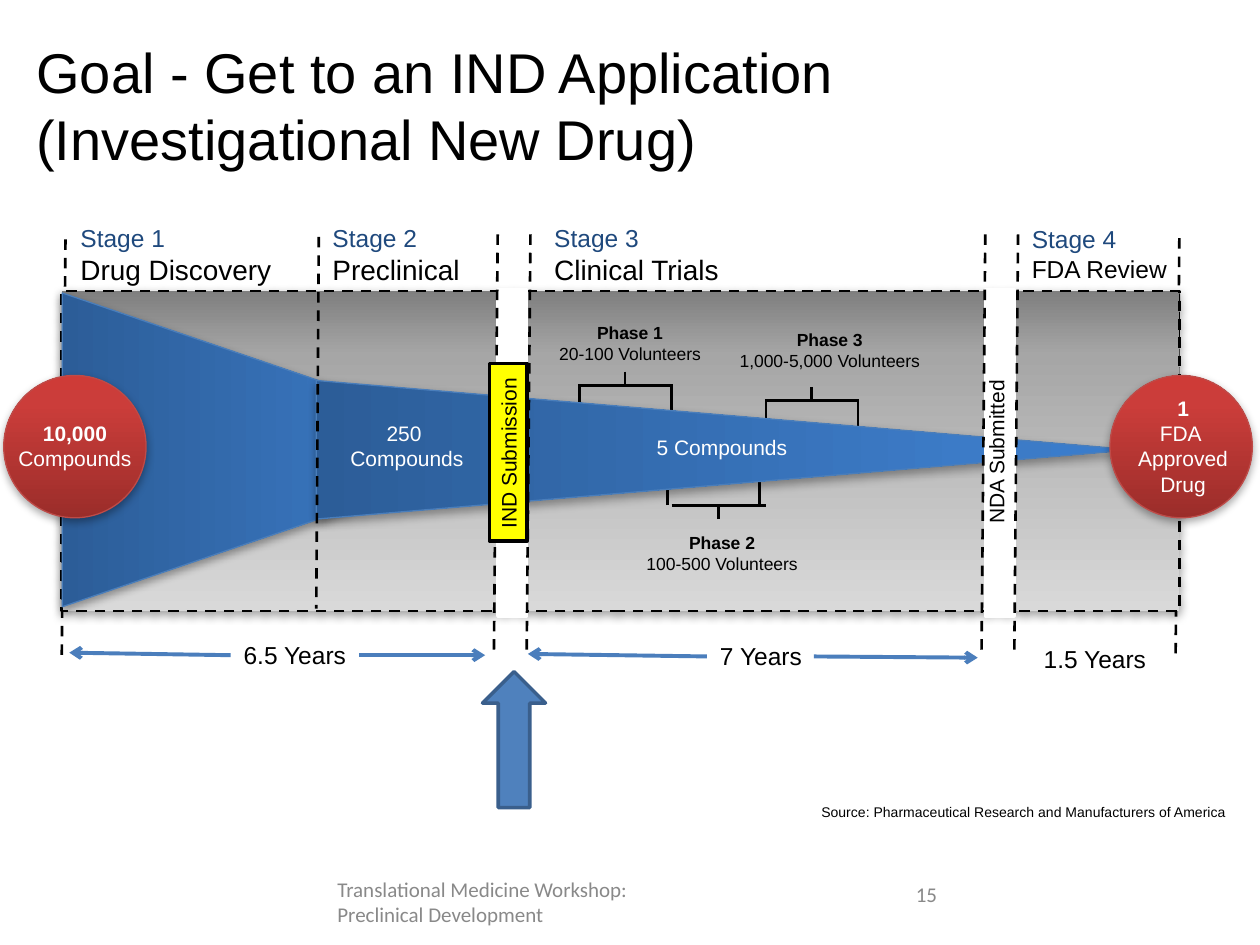
from lxml import etree
from pptx import Presentation
from pptx.dml.color import RGBColor
from pptx.enum.dml import MSO_LINE
from pptx.enum.shapes import MSO_CONNECTOR, MSO_SHAPE
from pptx.enum.text import MSO_ANCHOR, MSO_AUTO_SIZE, PP_ALIGN
from pptx.oxml.ns import qn
from pptx.util import Inches, Pt

RECTANGLE, ELLIPSE = MSO_SHAPE.RECTANGLE, MSO_SHAPE.OVAL
TRIANGLE, UP_POINTER = MSO_SHAPE.FLOWCHART_EXTRACT, MSO_SHAPE.DOWN_ARROW
STRAIGHT, DASH = MSO_CONNECTOR.STRAIGHT, MSO_LINE.DASH
LEFT, CENTER = PP_ALIGN.LEFT, PP_ALIGN.CENTER
TOP, MIDDLE = MSO_ANCHOR.TOP, MSO_ANCHOR.MIDDLE
GROW = MSO_AUTO_SIZE.SHAPE_TO_FIT_TEXT

COLORS = {
    "black": "000000", "white": "FFFFFF", "yellow": "FFFF00",
    "stage": "1F497D", "footer": "898989", "span": "4B7EBC",
    "funnel_edge": "4A7EBB", "badge_edge": "BE4B48",
    "pointer": "4F81BD", "pointer_edge": "3A5F8C",
}
# Three stops each, from the bottom up
GRADIENTS = {
    "panel": ("D9D9D9", "A6A6A6", "7F7F7F"),
    "funnel": ("2C5D98", "3C7BC7", "3A7CCB"),
    "badge": ("9B2D2A", "CB3D3A", "CE3B37"),
}
STOPS = (0, 80, 100)


def rgb(name):
    return RGBColor.from_string(COLORS[name])


def font(size, color="black", bold=False, name="Arial"):
    return {"name": name, "size": Pt(size), "bold": bold, "color": color}


def write(shape, paragraphs, align=LEFT, wrap=False, anchor=TOP, auto_size=GROW):
    frame = shape.text_frame
    frame.word_wrap = wrap
    frame.vertical_anchor = anchor
    frame.auto_size = auto_size
    for index, (text, style) in enumerate(paragraphs):
        paragraph = frame.paragraphs[0] if index == 0 else frame.add_paragraph()
        paragraph.alignment = align
        run = paragraph.add_run()
        run.text = text
        for key, value in style.items():
            if key == "color":
                run.font.color.rgb = rgb(value)
            else:
                setattr(run.font, key, value)


def add_text(slide, box, paragraphs, rotation=0, **layout):
    shape = slide.shapes.add_textbox(*map(Inches, box))
    write(shape, paragraphs, **layout)
    shape.rotation = rotation
    return shape


def add_line(slide, start, end, color="black", width=1.5, dash=None, arrow=False):
    line = slide.shapes.add_connector(STRAIGHT, *map(Inches, start + end))
    line.line.color.rgb = rgb(color)
    line.line.width = Pt(width)
    if dash:
        line.line.dash_style = dash
    if arrow:
        etree.SubElement(line.line._get_or_add_ln(), qn("a:tailEnd"), type="arrow")
    etree.SubElement(line._element.spPr, qn("a:effectLst"))


def add_block(slide, kind, box, fill, edge, width, rotation=0):
    shape = slide.shapes.add_shape(kind, *map(Inches, box))
    shape.shadow.inherit = False
    shape.rotation = rotation
    shape.line.color.rgb = rgb(edge)
    shape.line.width = Pt(width)
    if fill in GRADIENTS:
        shade(shape, GRADIENTS[fill])
    else:
        shape.fill.solid()
        shape.fill.fore_color.rgb = rgb(fill)
    return shape


def shade(shape, colors):
    """Three-stop vertical gradient with a soft shadow below."""
    shape.fill.gradient()
    shape.fill.gradient_angle = 90
    properties = shape._element.spPr
    stops = properties.find(".//" + qn("a:gsLst"))
    for stop in list(stops):
        stops.remove(stop)
    for position, color in zip(STOPS, colors):
        stop = etree.SubElement(stops, qn("a:gs"), pos=str(position * 1000))
        etree.SubElement(stop, qn("a:srgbClr"), val=color)
    shadow = etree.SubElement(
        properties.find(qn("a:effectLst")), qn("a:outerShdw"),
        blurRad=str(Pt(5)), dist=str(Pt(1.8)), dir="5400000", rotWithShape="0")
    tint = etree.SubElement(shadow, qn("a:srgbClr"), val=COLORS["black"])
    etree.SubElement(tint, qn("a:alpha"), val="35000")


def add_divider(slide, x, top, bottom, lean=0.03):
    add_line(slide, (x, top), (x - lean, bottom), dash=DASH)


def add_bracket(slide, left, y, direction, leg_shift=0.01):
    """Stem towards the label, two legs towards the funnel."""
    middle = left + 0.37
    add_line(slide, (middle, y - 0.11 * direction), (middle, y))
    add_line(slide, (left, y), (left + 0.75, y))
    for x in (left + leg_shift, left + leg_shift + 0.73):
        add_line(slide, (x, y), (x, y + 0.22 * direction))


def add_gap(slide, x):
    """White strip between stages with a dashed divider on each side."""
    add_block(slide, RECTANGLE, (x, 2.3, 0.23, 2.59), "white", "white", 2)
    for edge in (x, x + 0.26):
        add_divider(slide, edge, 1.86, 5.2)


def add_badge(slide, left, text_box, lines):
    add_block(slide, ELLIPSE, (left, 2.98, 1.13, 1.13), "badge", "badge_edge", 0.75)
    paragraphs = [(text, font(12, "white", index == 0)) for index, text in enumerate(lines)]
    add_text(slide, text_box, paragraphs, align=CENTER)


def add_funnel(slide):
    add_divider(slide, 9.36, 1.89, 5.24)
    add_divider(slide, 0.52, 1.9, 5.25)
    panel = add_block(slide, RECTANGLE, (0.49, 2.31, 8.87, 2.54), "panel", "black", 1.5)
    panel.line.dash_style = DASH
    add_bracket(slide, 4.59, 3.06, 1)
    add_bracket(slide, 5.33, 4.01, -1, leg_shift=-0.03)
    add_bracket(slide, 6.07, 3.18, 1)
    for box in ((1.07, 1.75, 2.49, 3.64), (5.2, 0.33, 1.1, 6.48)):
        add_block(slide, TRIANGLE, box, "funnel", "funnel_edge", 0.75, 90)

    # Submission milestones and end points
    add_gap(slide, 3.95)
    milestone = add_block(slide, RECTANGLE, (3.33, 3.44, 1.41, 0.3), "yellow", "black", 2, 270)
    write(milestone, [("IND Submission", font(12))])
    add_divider(slide, 2.53, 1.88, 4.83, lean=0.02)
    add_badge(slide, 8.81, (8.92, 3.09, 0.94, 0.91), ["1", "FDA ", "Approved", "Drug"])
    add_badge(slide, 0.03, (0.04, 3.29, 1.11, 0.5), ["10,000", "Compounds"])
    add_gap(slide, 7.82)
    add_text(slide, (7.23, 3.43, 1.35, 0.3), [("NDA Submitted", font(12))], 270)


def add_labels(slide):
    # Compounds left in the funnel
    for box, lines in (
        ((2.44, 3.29, 1.58, 0.5), ("250 ", "Compounds")),
        ((4.94, 3.4, 1.58, 0.3), ("5 Compounds",)),
    ):
        add_text(slide, box, [(line, font(12, "white")) for line in lines],
                 align=CENTER, wrap=True)

    # Trial phases
    for number, (left, top, width, people) in enumerate((
        (4.33, 2.51, 1.34, "20-100"),
        (5.02, 4.17, 1.42, "100-500"),
        (5.76, 2.56, 1.65, "1,000-5,000"),
    ), 1):
        add_text(slide, (left, top, width, 0.44),
                 [(f"Phase {number}", font(10, bold=True)),
                  (f"{people} Volunteers", font(10))], align=CENTER)

    # Durations
    for left, top, width, years in (
        (1.83, 5.03, 1.02, "6.5"), (5.61, 5.04, 0.86, "7"), (8.18, 5.06, 1.02, "1.5"),
    ):
        add_text(slide, (left, top, width, 0.34), [(f"{years} Years", font(14))], align=CENTER)
    for start, end in (
        ((1.83, 5.2), (0.55, 5.18)), ((2.85, 5.2), (3.85, 5.2)),
        ((5.61, 5.21), (4.19, 5.19)), ((6.46, 5.21), (7.76, 5.22)),
    ):
        add_line(slide, start, end, "span", 2.25, arrow=True)

    # Stage headings
    for number, (left, top, width, height, name, size) in enumerate((
        (0.54, 1.72, 1.74, 0.61, "Drug Discovery", 16),
        (2.54, 1.72, 1.22, 0.61, "Preclinical", 16),
        (4.3, 1.72, 1.52, 0.61, "Clinical Trials", 16),
        (8.09, 1.73, 1.28, 0.57, "FDA Review", 14),
    ), 1):
        add_text(slide, (left, top, width, height),
                 [(f"Stage {number}", font(14, "stage")), (name, font(size))])


def main():
    presentation = Presentation()
    presentation.slide_width, presentation.slide_height = Inches(10), Inches(7.5)
    slide = presentation.slides.add_slide(presentation.slide_layouts[6])

    title = "Goal - Get to an IND Application (Investigational New Drug)"
    add_text(slide, (0.19, 0.58, 7.33, 0.5), [(title, font(32))],
             wrap=True, anchor=MIDDLE, auto_size=MSO_AUTO_SIZE.NONE)
    add_funnel(slide)
    add_labels(slide)

    # Source, pointer to the IND milestone, and footer
    source = "Source: Pharmaceutical Research and Manufacturers of America"
    add_text(slide, (6.42, 6.33, 3.43, 0.24), [(source, font(8))])
    pointer = add_block(slide, UP_POINTER, (3.83, 5.33, 0.5, 1.08), "pointer", "pointer_edge", 2)
    pointer._element.spPr.xfrm.set("flipV", "1")
    for box, text in (
        ((7.17, 6.95, 2.33, 0.4), "15"),
        ((2.58, 6.91, 3.17, 0.4), "Translational Medicine Workshop: Preclinical Development"),
    ):
        add_text(slide, box, [(text, font(12, "footer", name="Calibri"))],
                 wrap=True, auto_size=MSO_AUTO_SIZE.NONE)
    presentation.save("out.pptx")


if __name__ == "__main__":
    main()
